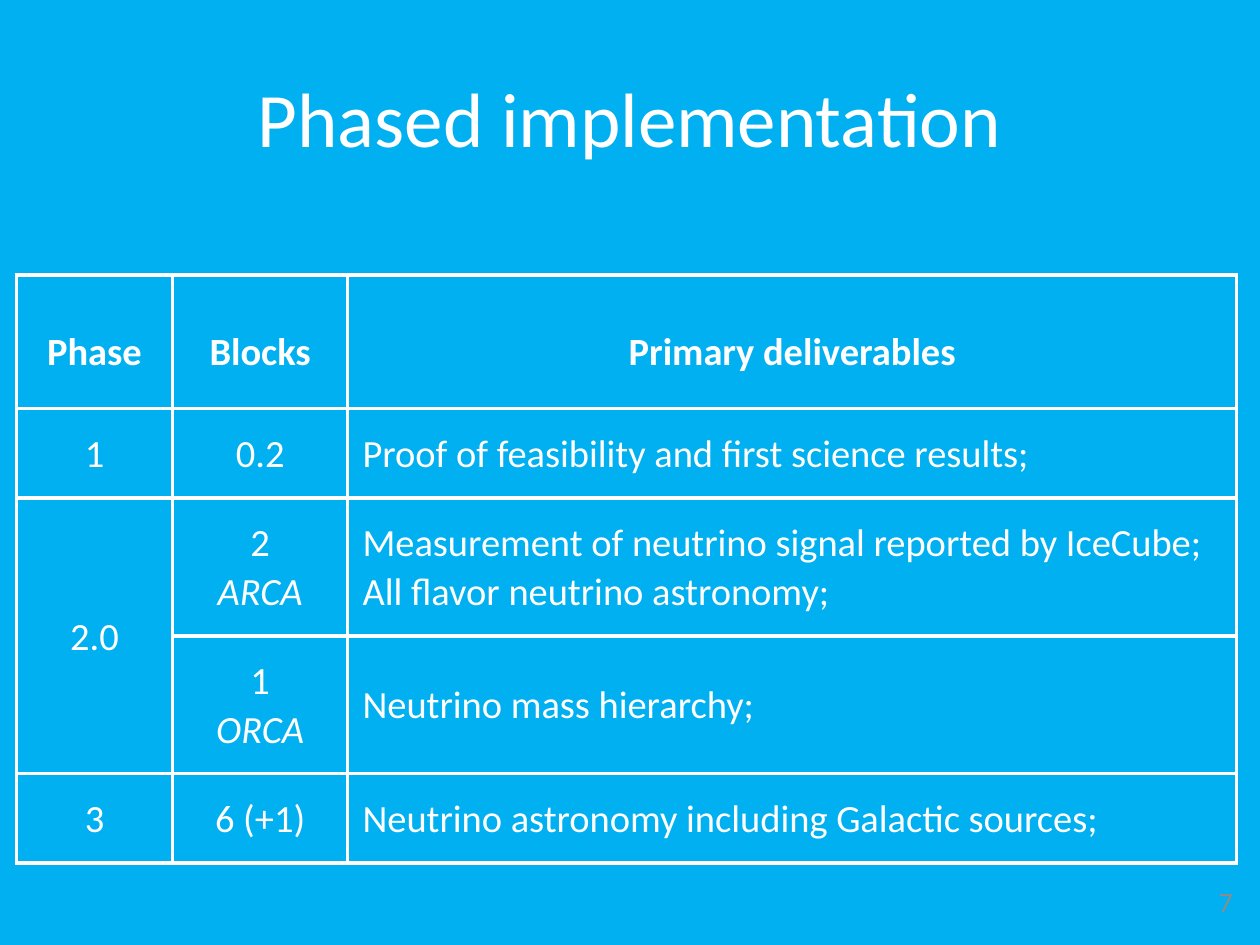
from dataclasses import dataclass

from lxml.etree import SubElement
from pptx import Presentation
from pptx.dml.color import RGBColor
from pptx.enum.text import MSO_ANCHOR as Anchor, PP_ALIGN as Align
from pptx.oxml.ns import qn
from pptx.util import Cm, Pt

COLORS = {"sky": "00B0F0", "white": "FFFFFF", "gray": "8C8C8C"}
FONT = "Calibri"
COLUMN_WIDTHS = (3.15, 3.53, 17.92)
ROW_HEIGHTS = (2.7, 1.8, 2.77, 2.77, 1.8)
HEADER_INSETS = (0, 0.4, 0, 0)
BODY_INSETS = (0.3, 0.4, 0.3, 0.4)


@dataclass
class Label:
    text: str
    left: float
    top: float
    width: float
    height: float
    size: float
    color: str
    align: Align


@dataclass
class Phase:
    name: str
    blocks: str
    deliverables: str
    detector: str = ""


LABELS = (
    Label("Phased implementation", 1.27, 0.76, 22.86, 3.18, 44, "white", Align.CENTER),
    Label("7", 19.18, 17.65, 5.92, 1.02, 16, "gray", Align.RIGHT),
)
HEADINGS = ("Phase", "Blocks", "Primary deliverables")
PHASES = (
    Phase("1", "0.2", "Proof of feasibility and first science results;"),
    Phase("2.0", "2", "Measurement of neutrino signal reported by IceCube;\n"
          "All flavor neutrino astronomy;", "ARCA"),
    Phase("", "1", "Neutrino mass hierarchy;", "ORCA"),
    Phase("3", "6 (+1)", "Neutrino astronomy including Galactic sources;"),
)


def add_span(para, text: str, size: float, color: str = "white",
             bold: bool = False, italic: bool = False) -> None:
    for index, line in enumerate(text.split("\n")):
        if index:
            para.add_line_break()
        span = para.add_run()
        span.text = line
        font = span.font
        font.name, font.size = FONT, Pt(size)
        font.bold, font.italic = bold, italic
        font.color.rgb = RGBColor.from_string(COLORS[color])


def add_label(page, label: Label) -> None:
    box = page.shapes.add_textbox(
        Cm(label.left), Cm(label.top), Cm(label.width), Cm(label.height))
    frame = box.text_frame
    frame.word_wrap = True
    frame.vertical_anchor = Anchor.MIDDLE
    para = frame.paragraphs[0]
    para.alignment = label.align
    add_span(para, label.text, label.size, label.color)


def style_cell(cell, insets: tuple[float, ...]) -> None:
    cell.vertical_anchor = Anchor.MIDDLE
    cell.margin_left, cell.margin_top, cell.margin_right, cell.margin_bottom = map(Cm, insets)
    cell.fill.background()
    properties = cell._tc.get_or_add_tcPr()
    for index, side in enumerate(("lnL", "lnR", "lnT", "lnB")):
        border = SubElement(properties, qn(f"a:{side}"), w=str(Pt(2.25)))
        fill = SubElement(border, qn("a:solidFill"))
        SubElement(fill, qn("a:srgbClr"), val=COLORS["white"])
        properties.insert(index, border)


def add_line(cell, text: str, align: Align, first: bool = True,
             bold: bool = False, italic: bool = False) -> None:
    frame = cell.text_frame
    para = frame.paragraphs[0] if first else frame.add_paragraph()
    para.alignment = align
    para.line_spacing = Pt(28)
    add_span(para, text, 22, bold=bold, italic=italic)


def add_phase_table(page) -> None:
    table = page.shapes.add_table(
        len(ROW_HEIGHTS), len(COLUMN_WIDTHS), Cm(0.33), Cm(5.54),
        Cm(sum(COLUMN_WIDTHS)), Cm(sum(ROW_HEIGHTS))).table
    table.first_row = table.horz_banding = False
    for column, width in zip(table.columns, COLUMN_WIDTHS):
        column.width = Cm(width)
    for index, (row, height) in enumerate(zip(table.rows, ROW_HEIGHTS)):
        row.height = Cm(height)
        for cell in row.cells:
            style_cell(cell, BODY_INSETS if index else HEADER_INSETS)
    table.cell(2, 0).merge(table.cell(3, 0))

    for column, heading in enumerate(HEADINGS):
        add_line(table.cell(0, column), heading, Align.CENTER, bold=True)
    for row, phase in enumerate(PHASES, start=1):
        name, blocks, deliverables = (table.cell(row, column) for column in range(3))
        if phase.name:
            add_line(name, phase.name, Align.CENTER)
        add_line(blocks, phase.blocks, Align.CENTER)
        if phase.detector:
            add_line(blocks, phase.detector, Align.CENTER, first=False, italic=True)
        add_line(deliverables, phase.deliverables, Align.LEFT)


def main() -> None:
    """Build the phased implementation slide and save it."""
    deck = Presentation()
    deck.slide_width, deck.slide_height = Cm(25.4), Cm(19.05)
    page = deck.slides.add_slide(deck.slide_layouts[6])
    background = page.background.fill
    background.solid()
    background.fore_color.rgb = RGBColor.from_string(COLORS["sky"])
    for label in LABELS:
        add_label(page, label)
    add_phase_table(page)
    deck.save("out.pptx")


if __name__ == "__main__":
    main()
